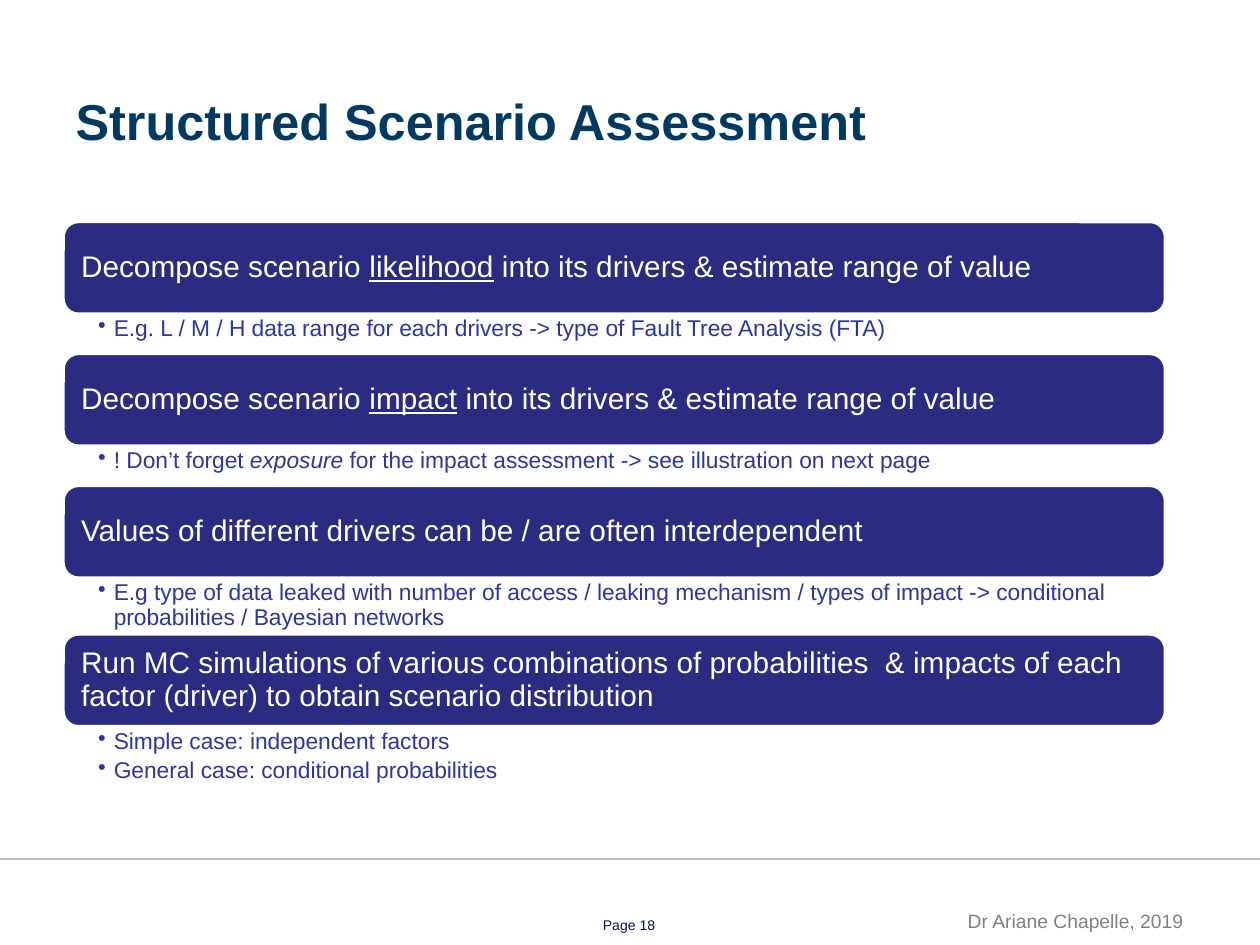
"""Build the slide on structured scenario assessment."""
import pptx
import pptx.util
import pptx.dml.color
import pptx.enum.shapes
import pptx.enum.text
import pptx.oxml.ns
import lxml.etree

Pt = pptx.util.Pt
RGB = pptx.dml.color.RGBColor
Align = pptx.enum.text.PP_ALIGN
Anchor = pptx.enum.text.MSO_ANCHOR
qn = pptx.oxml.ns.qn

TITLE = RGB(0x00, 0x3A, 0x63)
BAR = RGB(0x2B, 0x2B, 0x81)
NOTE = RGB(0x2B, 0x36, 0xA1)
WHITE = RGB(0xFF, 0xFF, 0xFF)
RULE = RGB(0xBF, 0xBF, 0xBF)
PAGE = RGB(0x03, 0x14, 0x51)
GREY = RGB(0x80, 0x80, 0x80)


def set_frame(shape, left, top, right, low, anchor):
    frame = shape.text_frame
    frame.word_wrap = True
    frame.auto_size = pptx.enum.text.MSO_AUTO_SIZE.NONE
    frame.margin_left, frame.margin_top = Pt(left), Pt(top)
    frame.margin_right, frame.margin_bottom = Pt(right), Pt(low)
    frame.vertical_anchor = anchor
    return frame


def add_runs(para, runs, size, color, align=Align.LEFT):
    para.alignment = align
    for text, style in runs:
        run = para.add_run()
        run.text = text
        font = run.font
        font.name, font.size = "Arial", Pt(size)
        font.color.rgb = color
        font.bold = style == "bold"
        font.italic = style == "italic"
        font.underline = style == "underline"


deck = pptx.Presentation()
deck.slide_width, deck.slide_height = Pt(720), Pt(540)
slide = deck.slides.add_slide(deck.slide_layouts[5])
shapes = slide.shapes

title = shapes.title
title.left, title.top, title.width, title.height = Pt(36), Pt(50), Pt(648), Pt(38)
frame = set_frame(title, 7.2, 3.6, 7.2, 3.6, Anchor.MIDDLE)
add_runs(frame.paragraphs[0], [("Structured Scenario Assessment", "bold")], 28.8, TITLE)

rule = shapes.add_connector(
    pptx.enum.shapes.MSO_CONNECTOR.STRAIGHT, Pt(0), Pt(491), Pt(720), Pt(491))
rule.line.color.rgb = RULE
rule.line.width = Pt(1)
lxml.etree.SubElement(rule._element.spPr, qn("a:effectLst"))

for text, left, top, width, height, size, color, align in [
    ("Page 18", 303, 520, 113, 14.4, 8, PAGE, Align.CENTER),
    ("Dr Ariane Chapelle, 2019", 14.4, 516, 669, 21, 11, GREY, Align.RIGHT),
]:
    box = shapes.add_textbox(Pt(left), Pt(top), Pt(width), Pt(height))
    frame = set_frame(box, 7.2, 3.6, 7.2, 3.6, Anchor.TOP)
    add_runs(frame.paragraphs[0], [(text, "")], size, color, align)

STEPS = [
    ([("Decompose scenario ", ""), ("likelihood", "underline"),
      (" into its drivers & estimate range of value", "")],
     [[("E.g. L / M / H data range for each drivers -> "
        "type of Fault Tree Analysis (FTA)", "")]], 22.4),
    ([("Decompose scenario ", ""), ("impact", "underline"), (" ", "italic"),
      ("into its drivers & estimate range of value", "")],
     [[("! Don’t forget ", ""), ("exposure", "italic"),
       (" for the impact assessment -> see illustration on next page", "")]], 22.4),
    ([("Values of different drivers can be / are often interdependent", "")],
     [[("E.g type of data leaked with number of access / leaking mechanism / "
        "types of impact -> conditional probabilities / Bayesian networks", "")]], 31.9),
    ([("Run MC simulations of various combinations of probabilities  & impacts "
       "of each factor (driver) to obtain scenario distribution", "")],
     [[("Simple case: independent factors", "")],
      [("General case: conditional probabilities", "")]], 35.3),
]

top = 126.6
for head, notes, depth in STEPS:
    bar = shapes.add_shape(pptx.enum.shapes.MSO_SHAPE.ROUNDED_RECTANGLE,
                           Pt(36), Pt(top), Pt(630), Pt(53))
    bar.shadow.inherit = False
    bar.fill.solid()
    bar.fill.fore_color.rgb = BAR
    bar.line.color.rgb = WHITE
    bar.line.width = Pt(2)
    frame = set_frame(bar, 7.7, 5, 7.7, 5, Anchor.MIDDLE)
    para = frame.paragraphs[0]
    para.line_spacing = 0.9
    add_runs(para, head, 17, WHITE)
    top += 53

    box = shapes.add_textbox(Pt(36), Pt(top), Pt(630), Pt(depth))
    frame = set_frame(box, 20, 1.7, 9.4, 1.7, Anchor.TOP)
    for i, runs in enumerate(notes):
        para = frame.add_paragraph() if i else frame.paragraphs[0]
        para.level = 1
        para.line_spacing = 0.9
        para.space_after = Pt(2.6)
        props = para._p.get_or_add_pPr()
        props.set("marL", str(Pt(9)))
        props.set("indent", str(-Pt(9)))
        lxml.etree.SubElement(props, qn("a:buChar")).set("char", "•")
        add_runs(para, runs, 13, NOTE)
    top += depth

deck.save("out.pptx")
